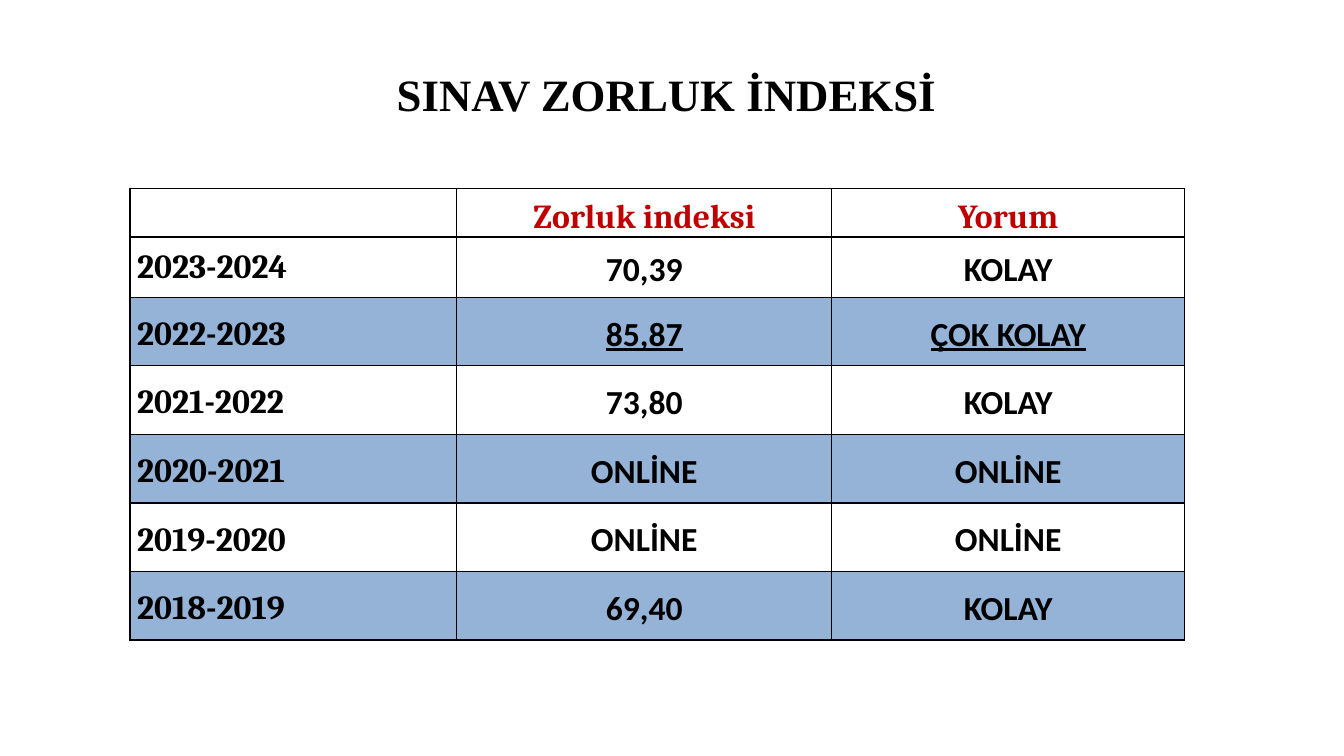
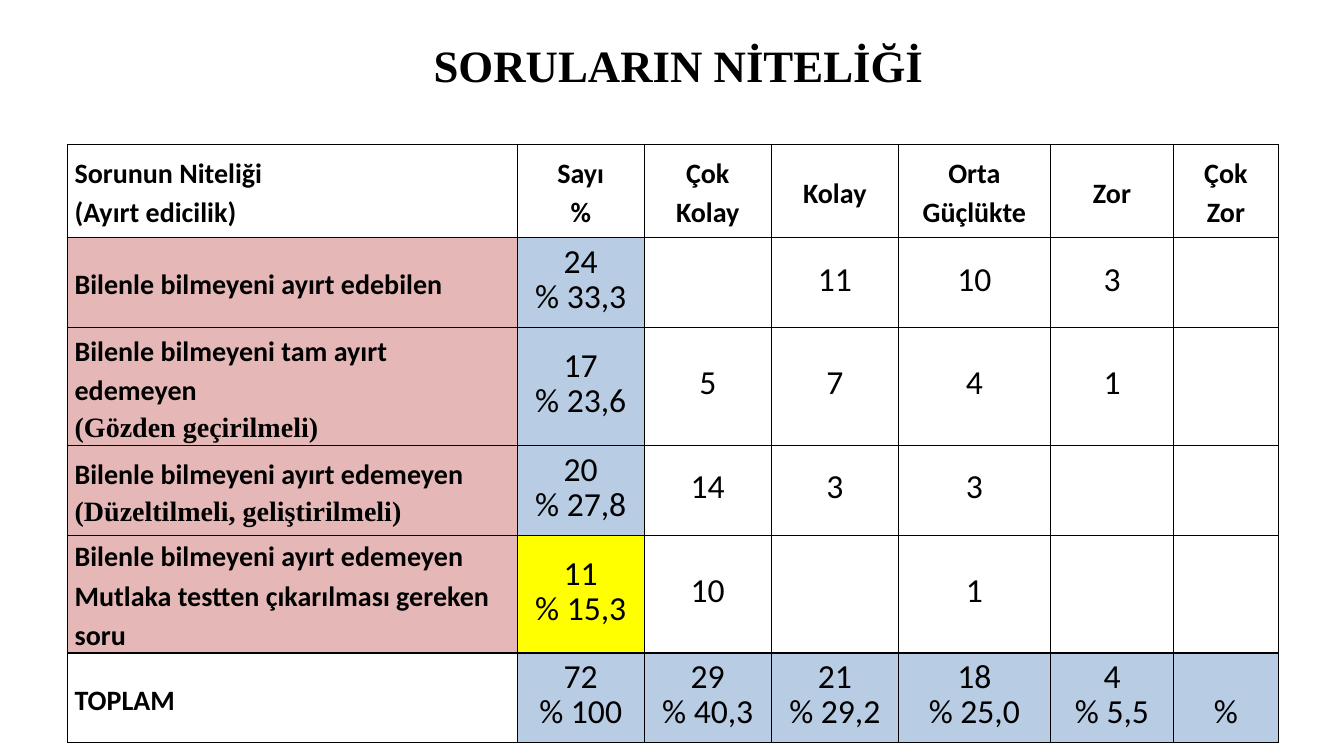
"""Build two slides with tables on exam difficulty and question quality."""
from lxml.etree import SubElement
from pptx import Presentation
from pptx.dml.color import RGBColor
from pptx.enum.text import MSO_ANCHOR, PP_ALIGN
from pptx.oxml.ns import qn
from pptx.util import Inches, Pt

BLACK = RGBColor(0x00, 0x00, 0x00)
WHITE = RGBColor(0xFF, 0xFF, 0xFF)
RED = RGBColor(0xC0, 0x00, 0x00)
BLUE = RGBColor(0x95, 0xB3, 0xD7)
LIGHT_BLUE = RGBColor(0xB8, 0xCC, 0xE4)
PINK = RGBColor(0xE5, 0xB8, 0xB7)
YELLOW = RGBColor(0xFF, 0xFF, 0x00)


def add_table_slide(title, title_box, table_position, column_widths, row_heights):
    slide = presentation.slides.add_slide(presentation.slide_layouts[6])
    frame = slide.shapes.add_textbox(*map(Inches, title_box)).text_frame
    frame.word_wrap = True
    frame.vertical_anchor = MSO_ANCHOR.MIDDLE
    frame.text = title
    paragraph = frame.paragraphs[0]
    paragraph.alignment = PP_ALIGN.CENTER
    paragraph.font.name = "Times New Roman"
    paragraph.font.size = Pt(32)
    paragraph.font.bold = True
    paragraph.font.color.rgb = BLACK

    size = (sum(column_widths), sum(row_heights))
    table = slide.shapes.add_table(
        len(row_heights), len(column_widths), *map(Inches, table_position + size)
    ).table
    table.first_row = False
    table.horz_banding = False
    for column, width in zip(table.columns, column_widths):
        column.width = Inches(width)
    for row, height in zip(table.rows, row_heights):
        row.height = Inches(height)
    return table


def fill_cell(cell, text, fill, font_name, size, bold, centered, spacing, color=BLACK, top=1, bottom=1):
    cell.margin_left = cell.margin_right = Inches(0.07)
    cell.margin_top = cell.margin_bottom = 0
    cell.vertical_anchor = MSO_ANCHOR.MIDDLE
    properties = cell._tc.get_or_add_tcPr()
    for side, width in (("L", 1), ("R", 1), ("T", top), ("B", bottom)):
        line = SubElement(properties, qn(f"a:ln{side}"), w=str(Pt(width)))
        SubElement(SubElement(line, qn("a:solidFill")), qn("a:srgbClr"), val=str(BLACK))
    cell.fill.solid()
    cell.fill.fore_color.rgb = fill
    cell.text = text
    for paragraph in cell.text_frame.paragraphs:
        paragraph.alignment = PP_ALIGN.CENTER if centered else PP_ALIGN.LEFT
        paragraph.line_spacing = spacing
        paragraph.font.name = font_name
        paragraph.font.size = Pt(size)
        paragraph.font.bold = bold
        paragraph.font.color.rgb = color


presentation = Presentation()
presentation.slide_width = Inches(13.33)
presentation.slide_height = Inches(7.5)

difficulty_rows = [
    ("", "Zorluk indeksi", "Yorum"),
    ("2023-2024", "70,39", "KOLAY"),
    ("2022-2023", "85,87", "ÇOK KOLAY"),
    ("2021-2022", "73,80", "KOLAY"),
    ("2020-2021", "ONLİNE", "ONLİNE"),
    ("2019-2020", "ONLİNE", "ONLİNE"),
    ("2018-2019", "69,40", "KOLAY"),
]
difficulty_table = add_table_slide(
    "SINAV ZORLUK İNDEKSİ", (0.61, 0.3, 12, 1.25), (1.29, 1.87),
    (3.24, 3.72, 3.5), (0.48, 0.6) + (0.68,) * 5,
)
for row_index, texts in enumerate(difficulty_rows):
    header = row_index == 0
    for column_index, text in enumerate(texts):
        cell = difficulty_table.cell(row_index, column_index)
        label = column_index == 0
        fill_cell(
            cell, text,
            fill=BLUE if row_index in (2, 4, 6) else WHITE,
            font_name="Cambria" if header or label else "Calibri",
            size=24, bold=True, centered=not label,
            spacing=1.0 if label and row_index < 2 else 1.15,
            color=RED if header else BLACK,
            top=2.25 if row_index == 1 else 1,
            bottom=2.25 if header else 1,
        )
        if header:
            cell.vertical_anchor = MSO_ANCHOR.BOTTOM
        if texts[0] == "2022-2023" and not label:
            cell.text_frame.paragraphs[0].font.underline = True

quality_rows = [
    ("Sorunun Niteliği\n(Ayırt edicilik)", "Sayı\n%", "Çok Kolay", "Kolay",
     "Orta\nGüçlükte", "Zor", "Çok\nZor"),
    ("Bilenle bilmeyeni ayırt edebilen", "24\n% 33,3", "", "11", "10", "3", ""),
    ("Bilenle bilmeyeni tam ayırt edemeyen\n(Gözden geçirilmeli)",
     "17\n% 23,6", "5", "7", "4", "1", ""),
    ("Bilenle bilmeyeni ayırt edemeyen\n(Düzeltilmeli, geliştirilmeli)",
     "20\n% 27,8", "14", "3", "3", "", ""),
    ("Bilenle bilmeyeni ayırt edemeyen\nMutlaka testten çıkarılması gereken soru",
     "11\n% 15,3", "10", "", "1", "", ""),
    ("TOPLAM", "72\n% 100", "29\n% 40,3", "21\n% 29,2", "18\n% 25,0", "4\n% 5,5", "%"),
]
quality_table = add_table_slide(
    "SORULARIN NİTELİĞİ", (0.73, 0.24, 12, 0.81), (0.67, 1.43),
    (4.46, 1.26, 1.26, 1.26, 1.51, 1.22, 1.04), (0.93, 0.89, 1.17, 0.89, 1.17, 0.89),
)
total_index = len(quality_rows) - 1
for row_index, texts in enumerate(quality_rows):
    header = row_index == 0
    for column_index, text in enumerate(texts):
        cell = quality_table.cell(row_index, column_index)
        label = column_index == 0
        heading = header or label
        fill = WHITE
        if label and 0 < row_index < total_index:
            fill = PINK
        elif row_index == 4 and column_index == 1:
            fill = YELLOW
        elif not heading and (column_index == 1 or row_index == total_index):
            fill = LIGHT_BLUE
        fill_cell(
            cell, text, fill, "Calibri",
            size=20 if heading else 24, bold=heading, centered=not label,
            spacing=1.15 if heading else Pt(25),
        )
        if label and not header:
            for paragraph in cell.text_frame.paragraphs:
                if paragraph.text.startswith("("):
                    paragraph.font.name = "Times New Roman"

empty_total = quality_table.cell(total_index, 6)
empty_total.vertical_anchor = MSO_ANCHOR.BOTTOM
empty_total.margin_bottom = Inches(0.1)

presentation.save("out.pptx")
